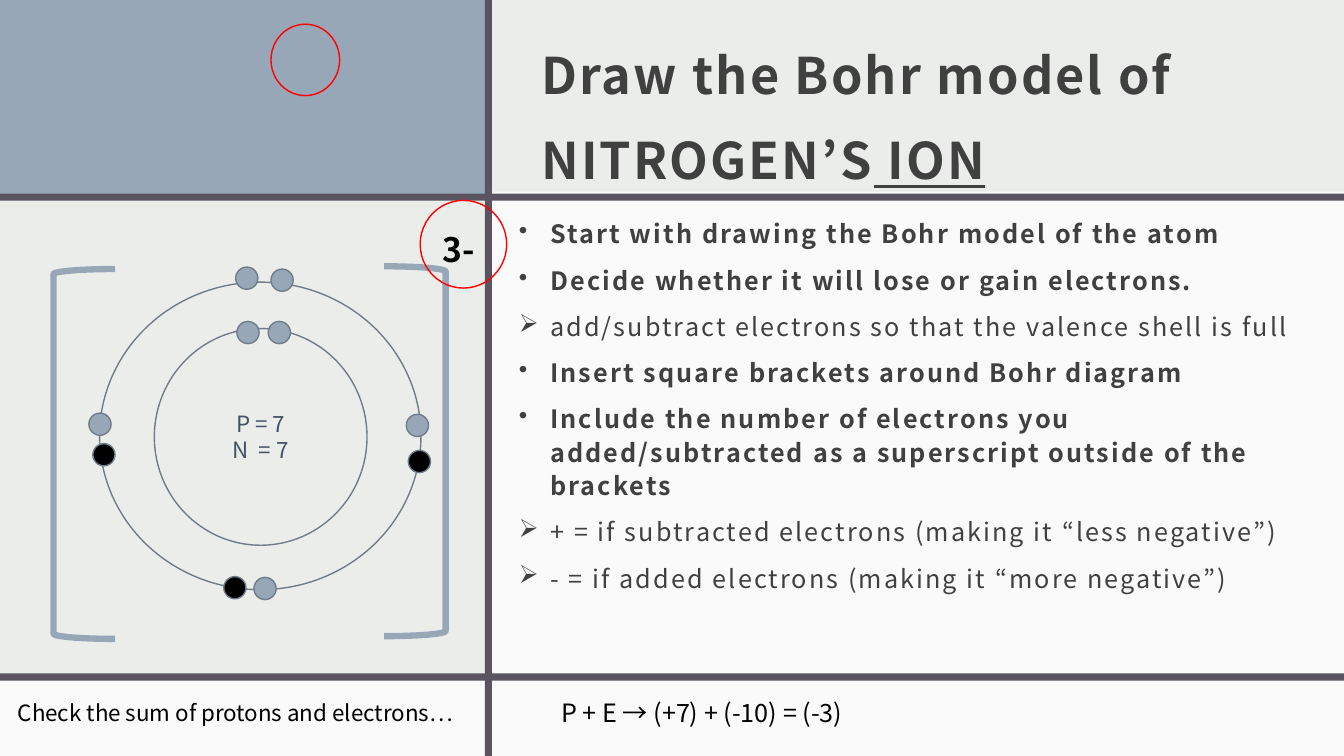
from dataclasses import dataclass

from lxml.etree import SubElement
from pptx import Presentation
from pptx.dml.color import RGBColor
from pptx.enum.shapes import MSO_SHAPE
from pptx.enum.text import MSO_ANCHOR, PP_ALIGN
from pptx.oxml.ns import qn
from pptx.util import Cm, Pt


@dataclass(frozen=True)
class Theme:
    font: str = "Noto Sans CJK JP"
    background: str = "EBEDEB"
    blue: str = "97A7B8"
    white: str = "FFFFFF"
    bar: str = "595460"
    heading: str = "404040"
    nucleus: str = "445364"
    outline: str = "707C88"
    black: str = "000000"
    red: str = "FF0000"
    title_size: float = 36
    charge_size: float = 24
    body_size: float = 18
    small_size: float = 16
    thin: float = 1
    thick: float = 4.5


@dataclass(frozen=True)
class Area:
    left: float
    top: float
    width: float
    height: float

    def lengths(self) -> tuple:
        return Cm(self.left), Cm(self.top), Cm(self.width), Cm(self.height)


@dataclass(frozen=True)
class Figure:
    area: Area
    kind: MSO_SHAPE = MSO_SHAPE.OVAL
    fill: str | None = None
    line: str | None = None
    weight: float = 1
    opacity: int = 100
    rotation: int = 0


@dataclass(frozen=True)
class Style:
    size: float
    color: str
    bold: bool = False
    underline: bool = False
    spacing: int = 0


@dataclass(frozen=True)
class Step:
    text: str
    detail: bool = False


THEME = Theme()
WIDTH, HEIGHT = 33.87, 19.05
BAR = 0.18
ELECTRON = 0.56
RECTANGLE = MSO_SHAPE.RECTANGLE
BRACKET = MSO_SHAPE.LEFT_BRACKET

PANELS = [
    Figure(Area(0, 0, 12.29, 5), RECTANGLE, THEME.blue),
    Figure(Area(12.29, 4.83, 21.58, 12.29), RECTANGLE, THEME.white, opacity=75),
    Figure(Area(0, 4.88, WIDTH, BAR), RECTANGLE, THEME.bar),
    Figure(Area(0, 17.12, WIDTH, 1.93), RECTANGLE, THEME.white, opacity=75),
    Figure(Area(0, 16.97, WIDTH, BAR), RECTANGLE, THEME.bar),
    Figure(Area(12.22, 0, BAR, HEIGHT), RECTANGLE, THEME.bar),
]
NUCLEUS = Figure(Area(4.88, 9.3, 3.38, 3.4))
SHELLS = [
    Figure(Area(3.89, 8.28, 5.36, 5.46), line=THEME.outline),
    Figure(Area(2.51, 7.11, 8.1, 7.75), line=THEME.outline),
]
ELECTRONS = {
    THEME.blue: [(5.97, 8.1), (6.76, 8.1), (5.94, 6.73), (10.24, 10.44),
                 (6.4, 14.55), (2.24, 10.41), (6.83, 6.78)],
    THEME.black: [(2.34, 11.18), (5.64, 14.53), (10.29, 11.35)],
}
BRACKETS = [
    Figure(Area(left, top, 1.55, 9.32), BRACKET, line=THEME.blue,
           weight=THEME.thick, rotation=rotation)
    for left, top, rotation in [(1.35, 6.78, 0), (9.68, 6.71, 180)]
]
RED_RINGS = [
    Figure(Area(6.83, 0.61, 1.73, 1.8), line=THEME.red),
    Figure(Area(10.59, 5.05, 2.18, 2.21), line=THEME.red),
]
STEPS = [
    Step("Start with drawing the Bohr model of the atom"),
    Step("Decide whether it will lose or gain electrons."),
    Step("add/subtract electrons so that the valence shell is full", True),
    Step("Insert square brackets around Bohr diagram"),
    Step("Include the number of electrons you added/subtracted as a "
         "superscript outside of the brackets"),
    Step("+ = if subtracted electrons (making it “less negative”)", True),
    Step("- = if added electrons (making it “more negative”)", True),
]


def draw(page, figure: Figure):
    shape = page.shapes.add_shape(figure.kind, *figure.area.lengths())
    shape.shadow.inherit = False
    shape.rotation = figure.rotation
    if figure.fill:
        shape.fill.solid()
        shape.fill.fore_color.rgb = RGBColor.from_string(figure.fill)
        if figure.opacity < 100:
            color = shape.fill._xPr.find(qn("a:solidFill"))[0]
            SubElement(color, qn("a:alpha"), val=str(figure.opacity * 1000))
    else:
        shape.fill.background()
    if figure.line:
        shape.line.color.rgb = RGBColor.from_string(figure.line)
        shape.line.width = Pt(figure.weight)
    else:
        shape.line.fill.background()
    return shape


def add_box(page, area: Area):
    frame = page.shapes.add_textbox(*area.lengths()).text_frame
    frame.word_wrap = True
    return frame


def add_span(para, text: str, style: Style) -> None:
    span = para.add_run()
    span.text = text
    font = span.font
    font.name = THEME.font
    font.size = Pt(style.size)
    font.bold = style.bold
    font.underline = style.underline
    font.color.rgb = RGBColor.from_string(style.color)
    properties = span._r.get_or_add_rPr()
    properties.set("spc", str(style.spacing))
    SubElement(properties, qn("a:ea"), typeface=THEME.font)


def add_steps(page, area: Area) -> None:
    frame = add_box(page, area)
    for index, step in enumerate(STEPS):
        para = frame.add_paragraph() if index else frame.paragraphs[0]
        properties = para._p.get_or_add_pPr()
        properties.set("marL", str(Cm(0.79)))
        properties.set("indent", str(-Cm(0.79)))
        SubElement(properties, qn("a:buChar"), char="➢" if step.detail else "•")
        para.level = int(step.detail)
        para.line_spacing = 1.1
        para.space_before = Pt(9.3 if index else 0)
        add_span(para, step.text, Style(THEME.body_size, THEME.heading,
                                        bold=not step.detail, spacing=150))


def main() -> None:
    deck = Presentation()
    deck.slide_width, deck.slide_height = Cm(WIDTH), Cm(HEIGHT)
    page = deck.slides.add_slide(deck.slide_layouts[6])
    page.background.fill.solid()
    page.background.fill.fore_color.rgb = RGBColor.from_string(THEME.background)

    # Panels and dividing bars
    for panel in PANELS:
        draw(page, panel)

    # Title and steps
    title = add_box(page, Area(13.39, 0.41, 20.14, 4.45))
    title.vertical_anchor = MSO_ANCHOR.MIDDLE
    para = title.paragraphs[0]
    para.line_spacing = 1.4
    for text, underline in [("Draw the Bohr model of NITROGEN’S", False), (" ION", True)]:
        add_span(para, text, Style(THEME.title_size, THEME.heading, True, underline, 150))
    add_steps(page, Area(12.83, 5.31, 20.85, 12.29))

    # Nucleus
    frame = draw(page, NUCLEUS).text_frame
    frame.vertical_anchor = MSO_ANCHOR.MIDDLE
    for para, text in [(frame.paragraphs[0], "P = 7"), (frame.add_paragraph(), "N  = 7")]:
        para.alignment = PP_ALIGN.CENTER
        add_span(para, text, Style(THEME.small_size, THEME.nucleus))

    # Shells, electrons, brackets and red rings
    electrons = [
        Figure(Area(left, top, ELECTRON, ELECTRON), fill=fill, line=THEME.outline)
        for fill, places in ELECTRONS.items() for left, top in places
    ]
    for figure in SHELLS + electrons + BRACKETS + RED_RINGS:
        draw(page, figure)

    # Charge and sum of particles
    for area, text, style in [
        (Area(10.9, 5.64, 2.9, 1.27), "3-", Style(THEME.charge_size, THEME.black, True)),
        (Area(0.2, 17.5, 16.59, 0.94), "Check the sum of protons and electrons…",
         Style(THEME.small_size, THEME.black)),
        (Area(13.89, 17.45, 16.59, 1.02), "P + E → (+7) + (-10) = (-3)",
         Style(THEME.body_size, THEME.black)),
    ]:
        add_span(add_box(page, area).paragraphs[0], text, style)

    deck.save("out.pptx")


if __name__ == "__main__":
    main()
